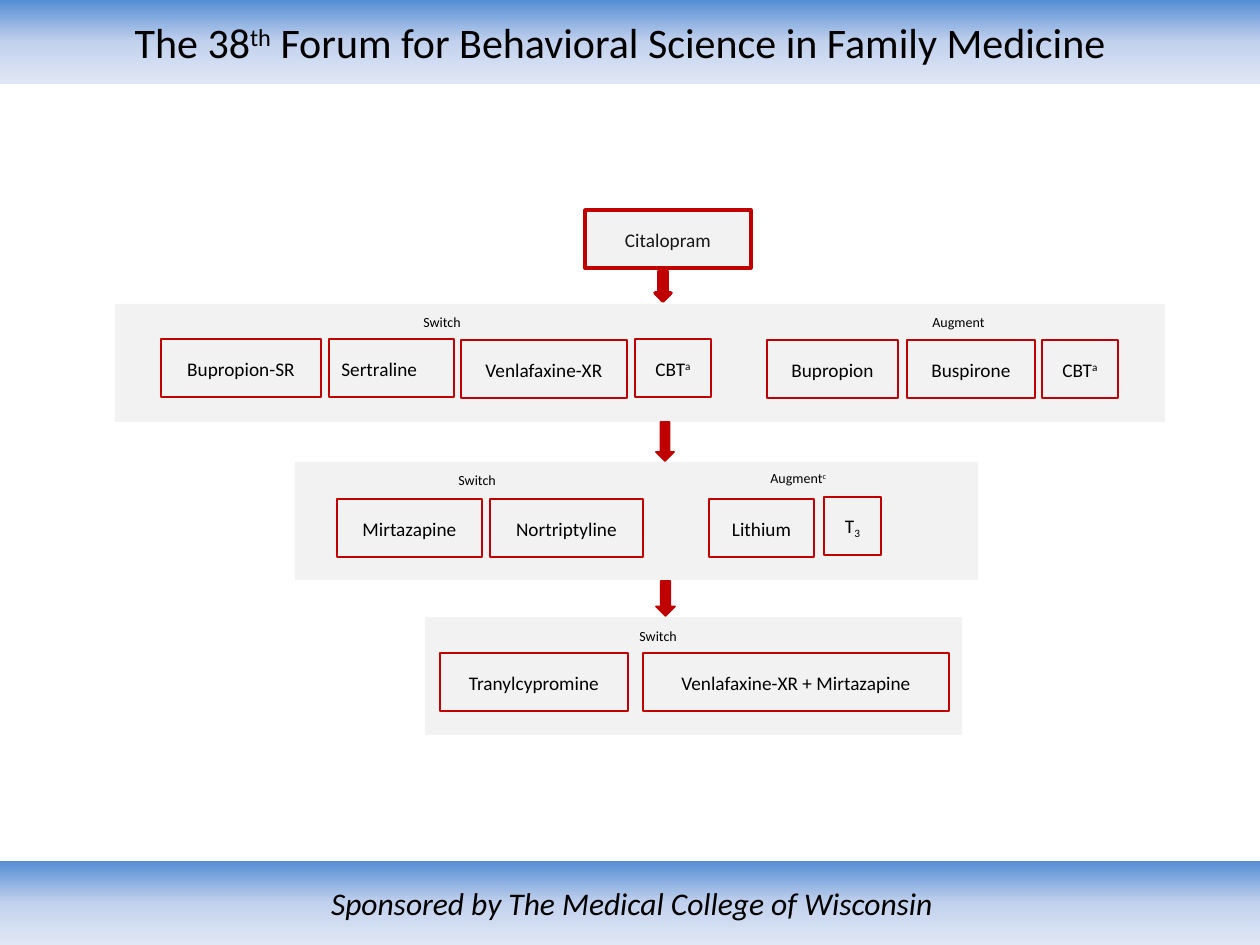
"""Build the antidepressant treatment-sequence slide."""
from copy import deepcopy

from pptx import Presentation
from pptx.dml.color import RGBColor
from pptx.enum.shapes import MSO_SHAPE
from pptx.enum.text import MSO_ANCHOR, PP_ALIGN
from pptx.oxml.ns import qn
from pptx.util import Pt

PX = 914400 / 126
RECT, ARROW = MSO_SHAPE.RECTANGLE, MSO_SHAPE.DOWN_ARROW
LEFT, CENTER = PP_ALIGN.LEFT, PP_ALIGN.CENTER
MIDDLE = MSO_ANCHOR.MIDDLE
COLORS = {
    name: RGBColor.from_string(value)
    for name, value in {
        "black": "000000", "charcoal": "171717", "red": "C00000", "panel": "F2F2F2",
        "band top": "558ED5", "band middle": "C2D1ED", "band bottom": "E1E8F5",
    }.items()
}


def write(frame, parts, size, align=CENTER, color="black"):
    """Write (text, baseline) parts as one paragraph."""
    frame.word_wrap = True
    paragraph = frame.paragraphs[0]
    paragraph.alignment = align
    for text, baseline in parts:
        run = paragraph.add_run()
        run.text = text
        if baseline:
            run.font._element.set("baseline", str(baseline * 1000))
    paragraph.font.name = "Calibri"
    paragraph.font.size = Pt(size)
    paragraph.font.color.rgb = COLORS[color]
    return paragraph


def add_block(kind, bounds, fill=None, line_width=0):
    """Add a flat shape, with a red outline if it has a line width."""
    block = slide.shapes.add_shape(kind, *[round(v * PX) for v in bounds])
    block.shadow.inherit = False
    if fill:
        block.fill.solid()
        block.fill.fore_color.rgb = COLORS[fill]
    else:
        block.fill.background()
    if line_width:
        block.line.color.rgb = COLORS["red"]
        block.line.width = Pt(line_width)
    else:
        block.line.fill.background()
    return block


prs = Presentation()
prs.slide_width, prs.slide_height = round(1260 * PX), round(945 * PX)
slide = prs.slides.add_slide(prs.slide_layouts[5])

header = slide.shapes.title
header.left, header.top, header.width, header.height = [
    round(v * PX) for v in (0, 0, 1260, 84)
]
header.text_frame.margin_right = round(32 * PX)
write(header.text_frame, [
    ("The 38", 0), ("th", 30), (" Forum for Behavioral Science in Family Medicine", 0),
], 24)

footer = add_block(RECT, (0, 861, 1264, 84))
write(footer.text_frame, [("Sponsored by The Medical College of Wisconsin", 0)], 18).font.italic = True

for band in (header, footer):
    band.text_frame.vertical_anchor = MIDDLE
    band.fill.gradient()
    band.fill.gradient_angle = 270
    stop_list = band._element.spPr.find(".//" + qn("a:gsLst"))
    stop_list.insert(1, deepcopy(stop_list[0]))
    for stop, position, color in zip(
        band.fill.gradient_stops, (0, 0.5, 1), ("band top", "band middle", "band bottom")
    ):
        stop.position = position
        stop.color.rgb = COLORS[color]

for left, top, width in [(425, 617, 537), (295, 462, 683), (115, 304, 1050)]:
    add_block(RECT, (left, top, width, 118), "panel")

first_step = add_block(RECT, (585, 210, 166, 58), "panel", 2)
treatments = [
    (161, 339, 160, [("Bupropion-SR", 0)], CENTER),
    (329, 339, 125, [("Sertraline", 0)], LEFT),
    (461, 340, 166, [("Venlafaxine-XR", 0)], CENTER),
    (635, 339, 76, [("CBT", 0), ("a", 30)], CENTER),
    (767, 340, 131, [("Bupropion", 0)], CENTER),
    (907, 340, 128, [("Buspirone", 0)], CENTER),
    (1042, 340, 76, [("CBT", 0), ("a", 30)], CENTER),
    (337, 499, 145, [("Mirtazapine", 0)], CENTER),
    (490, 499, 153, [("Nortriptyline", 0)], CENTER),
    (709, 499, 105, [("Lithium", 0)], CENTER),
    (824, 497, 57, [("T", 0), ("3", -25)], CENTER),
    (440, 653, 188, [("Tranylcypromine", 0)], CENTER),
    (643, 653, 306, [("Venlafaxine-XR + Mirtazapine", 0)], CENTER),
]
steps = [(first_step, [("Citalopram", 0)], CENTER, "charcoal")]
for left, top, width, parts, align in treatments:
    steps.append((add_block(RECT, (left, top, width, 58), None, 1), parts, align, "black"))
for step, parts, align, color in steps:
    step.text_frame.vertical_anchor = MIDDLE
    paragraph = write(step.text_frame, parts, 11, align, color)
    paragraph.line_spacing = 1.07
    paragraph.space_after = Pt(8)

for left, top, width, height, line_width in [
    (655, 271, 16, 30, 2), (656, 422, 18, 39, 1), (656, 581, 19, 35, 1),
]:
    add_block(ARROW, (left, top, width, height), "red", line_width)

for left, top, width, parts in [
    (411, 306, 84, [("Switch", 0)]),
    (446, 464, 84, [("Switch", 0)]),
    (627, 620, 84, [("Switch", 0)]),
    (920, 306, 111, [("Augment", 0)]),
    (758, 462, 111, [("Augment", 0), ("c", 30)]),
]:
    strategy = slide.shapes.add_textbox(*[round(v * PX) for v in (left, top, width, 40)])
    paragraph = write(strategy.text_frame, parts, 8, LEFT)
    paragraph.line_spacing = 1.07
    paragraph.space_after = Pt(8)

prs.save("out.pptx")
